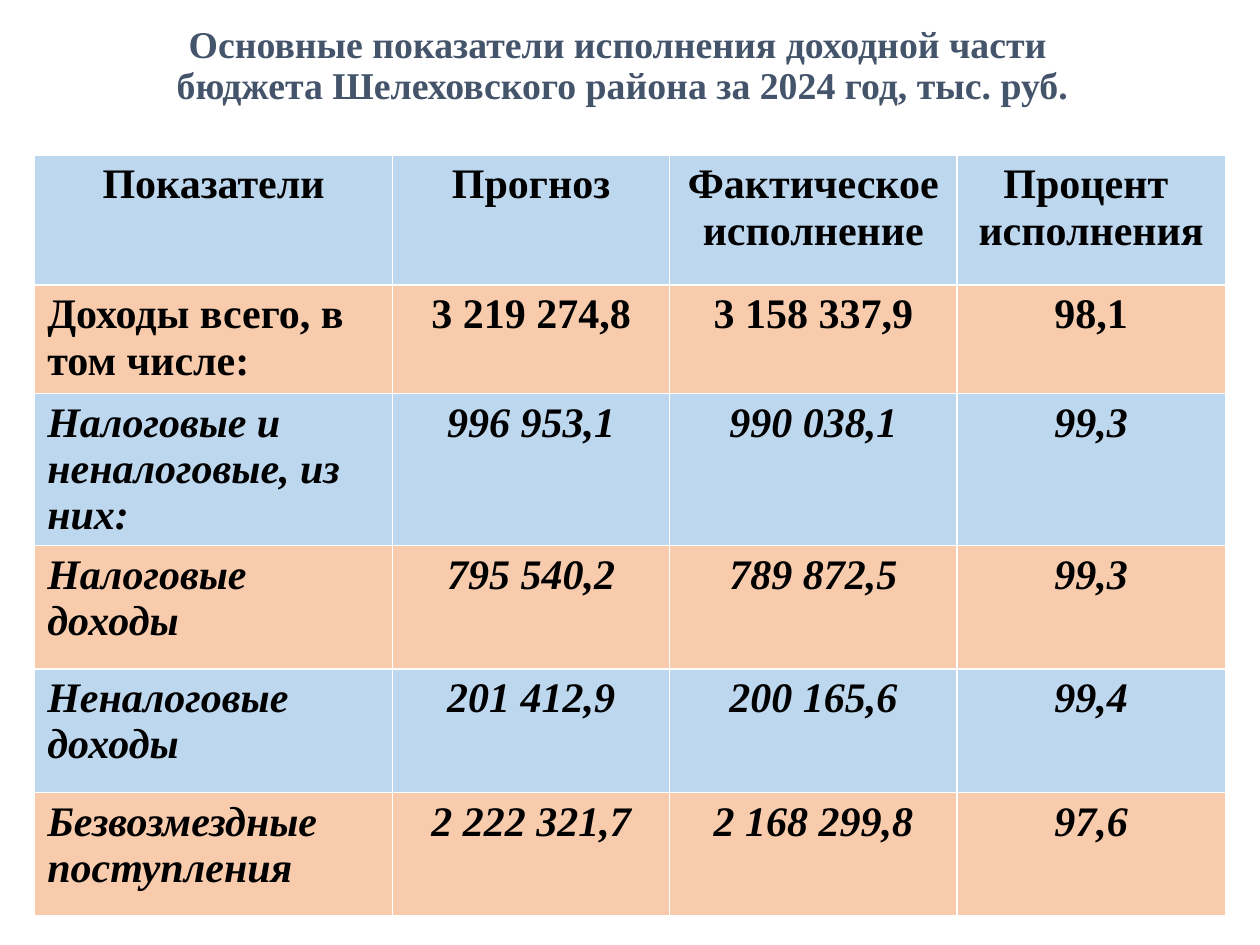
"""Build the slide on district budget revenue for 2024."""
from pptx import Presentation
from pptx.dml.color import RGBColor
from pptx.enum.text import MSO_ANCHOR, PP_ALIGN
from pptx.util import Cm, Pt

HUES = {"title": "44546A", "text": "000000", "blue": "BDD7EE", "peach": "F8CBAD"}
TITLE = "Основные показатели исполнения доходной части\v бюджета Шелеховского района за 2024 год, тыс. руб."
WIDTHS = [7.21, 5.59, 5.79, 5.41]
HEIGHTS = [2.62, 2.18, 2.49, 2.49, 2.49, 2.49]
ROWS = [
    ["Показатели", "Прогноз", "Фактическое\nисполнение", "Процент \nисполнения"],
    ["Доходы всего, в том числе:", "3 219 274,8", "3 158 337,9", "98,1"],
    ["Налоговые и неналоговые, из них:", "996 953,1", "990 038,1", "99,3"],
    ["Налоговые доходы", "795 540,2", "789 872,5", "99,3"],
    ["Неналоговые\nдоходы", "201 412,9", "200 165,6", "99,4"],
    ["Безвозмездные\nпоступления", "2 222 321,7", "2 168 299,8", "97,6"],
]


class Sheet:
    """Hold the style and the current slide."""

    def __init__(self, deck, face):
        self.face = face
        self.slide = deck.slides.add_slide(deck.slide_layouts[5])

    def style(self, frame, size, hue, align, italic=None):
        for para in frame.paragraphs:
            para.alignment = align
            for run in para.runs:
                font = run.font
                font.name, font.size = self.face, Pt(size)
                font.bold, font.italic = True, italic
                font.color.rgb = RGBColor.from_string(HUES[hue])

    def title(self, text, left, top, width, height):
        shape = self.slide.shapes.title
        shape.left, shape.top = Cm(left), Cm(top)
        shape.width, shape.height = Cm(width), Cm(height)
        frame = shape.text_frame
        frame.text = text
        frame.vertical_anchor = MSO_ANCHOR.MIDDLE
        frame.paragraphs[0].line_spacing = 0.9
        self.style(frame, 21.6, "title", PP_ALIGN.CENTER)

    def table(self, rows, left, top, widths, heights):
        grid = self.slide.shapes.add_table(
            len(rows), len(widths), Cm(left), Cm(top), Cm(sum(widths)), Cm(sum(heights))
        ).table
        for col, width in zip(grid.columns, widths):
            col.width = Cm(width)
        for row, height in zip(grid.rows, heights):
            row.height = Cm(height)
        for r, row in enumerate(rows):
            for c, text in enumerate(row):
                cell = grid.cell(r, c)
                cell.fill.solid()
                cell.fill.fore_color.rgb = RGBColor.from_string(HUES["peach" if r % 2 else "blue"])
                cell.text_frame.text = text
                align = PP_ALIGN.LEFT if r and not c else PP_ALIGN.CENTER
                self.style(cell.text_frame, 24, "text", align, r > 1)


def main():
    deck = Presentation()
    deck.slide_width, deck.slide_height = Cm(25.4), Cm(19.05)
    sheet = Sheet(deck, "Times New Roman")
    sheet.title(TITLE, 1.09, 0.35, 22.73, 2)
    sheet.table(ROWS, 0.7, 3.13, WIDTHS, HEIGHTS)
    deck.save("out.pptx")


if __name__ == "__main__":
    main()
